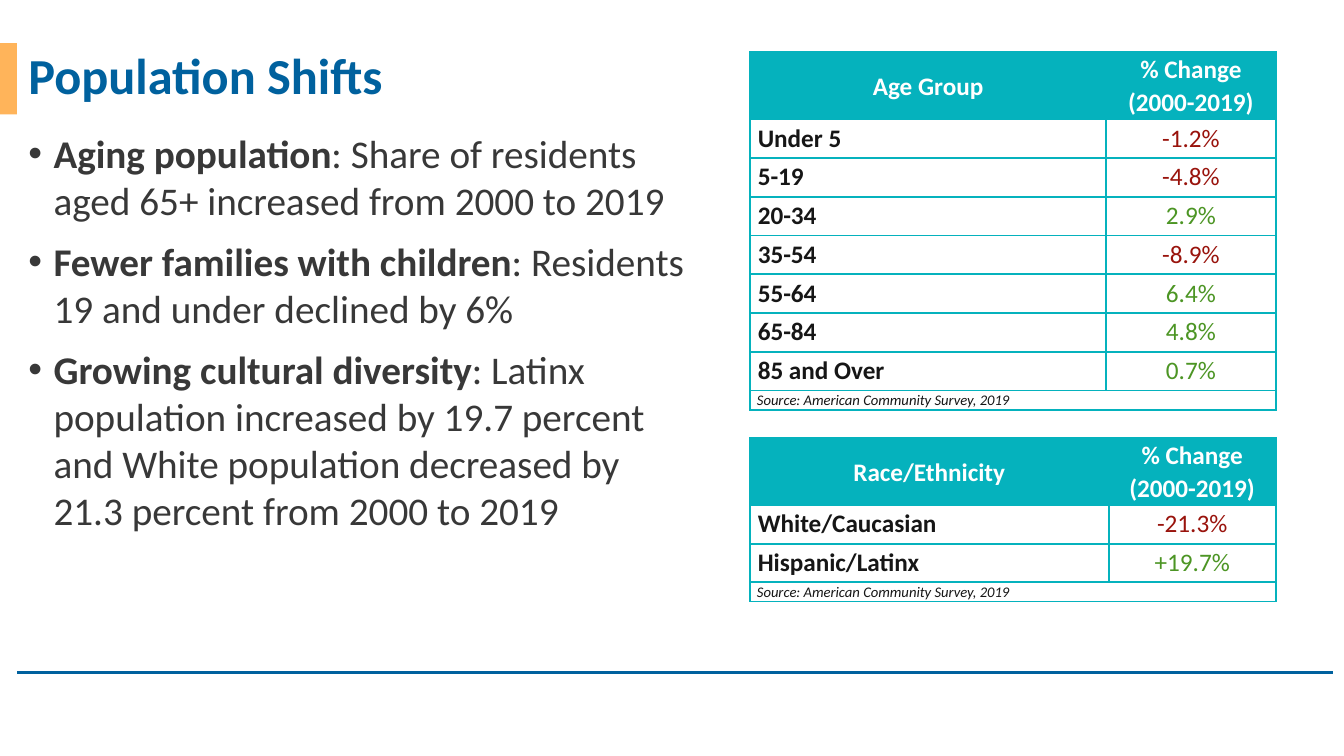
from dataclasses import dataclass

from lxml import etree
from pptx import Presentation
from pptx.dml.color import RGBColor
from pptx.enum.shapes import MSO_CONNECTOR, MSO_SHAPE
from pptx.enum.text import MSO_ANCHOR, PP_ALIGN
from pptx.oxml.ns import qn
from pptx.util import Pt

LEFT, CENTER, JUSTIFY = PP_ALIGN.LEFT, PP_ALIGN.CENTER, PP_ALIGN.JUSTIFY
TOP, MIDDLE = MSO_ANCHOR.TOP, MSO_ANCHOR.MIDDLE
FONT = "Calibri"
BLUE, ORANGE, TEAL, WHITE = "00619E", "FFB45A", "05B2BD", "FFFFFF"
GRAY, BLACK, RED, GREEN = "383838", "161616", "99130C", "4C9524"
SOURCE = "Source: American Community Survey, 2019"
HEADER_HEIGHT, ROW_HEIGHT, SOURCE_HEIGHT = 47.8, 27.7, 13.7


@dataclass
class ChangeTable:
    top: float
    widths: tuple[float, float]
    heading: str
    rows: list[tuple[str, str]]


@dataclass
class Bullet:
    lead: str
    detail: str


TABLES = [
    ChangeTable(37.3, (254.5, 121), "Age Group", [
        ("Under 5", "-1.2%"), ("5-19", "-4.8%"), ("20-34", "2.9%"),
        ("35-54", "-8.9%"), ("55-64", "6.4%"), ("65-84", "4.8%"),
        ("85 and Over", "0.7%")]),
    ChangeTable(312.8, (256.3, 119.2), "Race/Ethnicity", [
        ("White/Caucasian", "-21.3%"), ("Hispanic/Latinx", "+19.7%")]),
]
BULLETS = [
    Bullet("Aging population",
           ": Share of residents aged 65+ increased from 2000 to 2019"),
    Bullet("Fewer families with children",
           ": Residents 19 and under declined by 6%"),
    Bullet("Growing cultural diversity",
           ": Latinx population increased by 19.7 percent and White "
           "population decreased by 21.3 percent from 2000 to 2019"),
]


def rgb(value: str) -> RGBColor:
    return RGBColor.from_string(value)


def add_span(para, text: str, *, size: float, color: str,
             bold: bool = False, italic: bool = False) -> None:
    span = para.add_run()
    span.text = text
    font = span.font
    font.name, font.size, font.bold, font.italic = FONT, Pt(size), bold, italic
    font.color.rgb = rgb(color)


def add_text_frame(page, left: float, top: float, width: float, height: float,
                   anchor=TOP):
    frame = page.shapes.add_textbox(
        Pt(left), Pt(top), Pt(width), Pt(height)).text_frame
    frame.word_wrap = True
    frame.vertical_anchor = anchor
    return frame


def add_bullet_mark(para) -> None:
    properties = para._p.get_or_add_pPr()
    properties.set("marL", str(Pt(18)))
    properties.set("indent", str(-Pt(18)))
    etree.SubElement(properties, qn("a:buFont")).set("typeface", "Arial")
    etree.SubElement(properties, qn("a:buChar")).set("char", "•")


def add_borders(cell) -> None:
    properties = cell._tc.get_or_add_tcPr()
    for side in ("a:lnL", "a:lnR", "a:lnT", "a:lnB"):
        line = etree.SubElement(properties, qn(side), w=str(Pt(1.5)))
        fill = etree.SubElement(line, qn("a:solidFill"))
        etree.SubElement(fill, qn("a:srgbClr")).set("val", TEAL)


def fill_cell(cell, text: str, *, color: str, size: float = 18,
              fill: str = WHITE, align=LEFT, anchor=TOP, bold: bool = False,
              italic: bool = False, tight: bool = False) -> None:
    cell.fill.solid()
    cell.fill.fore_color.rgb = rgb(fill)
    cell.vertical_anchor = anchor
    cell.margin_left = cell.margin_right = Pt(5 if tight else 5.6)
    cell.margin_top = cell.margin_bottom = Pt(0 if tight else 2.8)
    para = cell.text_frame.paragraphs[0]
    para.alignment = align
    if tight:
        para.line_spacing = 1.07
        para.space_after = Pt(6)
    add_span(para, text, size=size, color=color, bold=bold, italic=italic)


def add_change_table(page, spec: ChangeTable) -> None:
    heights = [HEADER_HEIGHT, *[ROW_HEIGHT] * len(spec.rows), SOURCE_HEIGHT]
    table = page.shapes.add_table(
        len(heights), 2, Pt(535.7), Pt(spec.top),
        Pt(sum(spec.widths)), Pt(sum(heights))).table
    table.first_row = table.horz_banding = False
    for column, width in zip(table.columns, spec.widths):
        column.width = Pt(width)
    for row, height in zip(table.rows, heights):
        row.height = Pt(height)
    for cell in table.iter_cells():
        add_borders(cell)

    for index, text in enumerate((spec.heading, "% Change (2000-2019)")):
        fill_cell(table.cell(0, index), text, color=WHITE, fill=TEAL,
                  align=CENTER, anchor=MIDDLE, bold=True, tight=True)
    for index, (group, change) in enumerate(spec.rows, start=1):
        fill_cell(table.cell(index, 0), group, color=BLACK, bold=True)
        fill_cell(table.cell(index, 1), change, align=CENTER,
                  color=RED if change.startswith("-") else GREEN)
    last = len(heights) - 1
    table.cell(last, 0).merge(table.cell(last, 1))
    fill_cell(table.cell(last, 0), SOURCE, color=BLACK, size=10.5,
              align=JUSTIFY, italic=True, tight=True)


def main() -> None:
    deck = Presentation()
    deck.slide_width, deck.slide_height = Pt(960), Pt(540)
    page = deck.slides.add_slide(deck.slide_layouts[6])

    # Footer rule and title accent
    rule = page.shapes.add_connector(
        MSO_CONNECTOR.STRAIGHT, Pt(12.2), Pt(480.4), Pt(952), Pt(480.4))
    rule.line.color.rgb = rgb(BLUE)
    rule.line.width = Pt(1.5)
    etree.SubElement(rule._element.spPr, qn("a:effectLst"))
    accent = page.shapes.add_shape(
        MSO_SHAPE.RECTANGLE, 0, Pt(30.8), Pt(12.2), Pt(51))
    accent.shadow.inherit = False
    accent.fill.solid()
    accent.fill.fore_color.rgb = rgb(ORANGE)
    accent.line.fill.background()

    # Title
    title = add_text_frame(page, 13.2, 37.3, 921.6, 37.3, MIDDLE).paragraphs[0]
    title.line_spacing = 0.9
    add_span(title, "Population Shifts", size=36, color=BLUE, bold=True)

    # Bullets
    body = add_text_frame(page, 13.2, 88.6, 491.8, 381.6)
    for index, bullet in enumerate(BULLETS):
        para = body.add_paragraph() if index else body.paragraphs[0]
        add_bullet_mark(para)
        if index:
            para.space_before = Pt(10)
        add_span(para, bullet.lead, size=28, color=GRAY, bold=True)
        add_span(para, bullet.detail, size=28, color=GRAY)

    # Tables
    for spec in TABLES:
        add_change_table(page, spec)

    deck.save("out.pptx")


if __name__ == "__main__":
    main()
